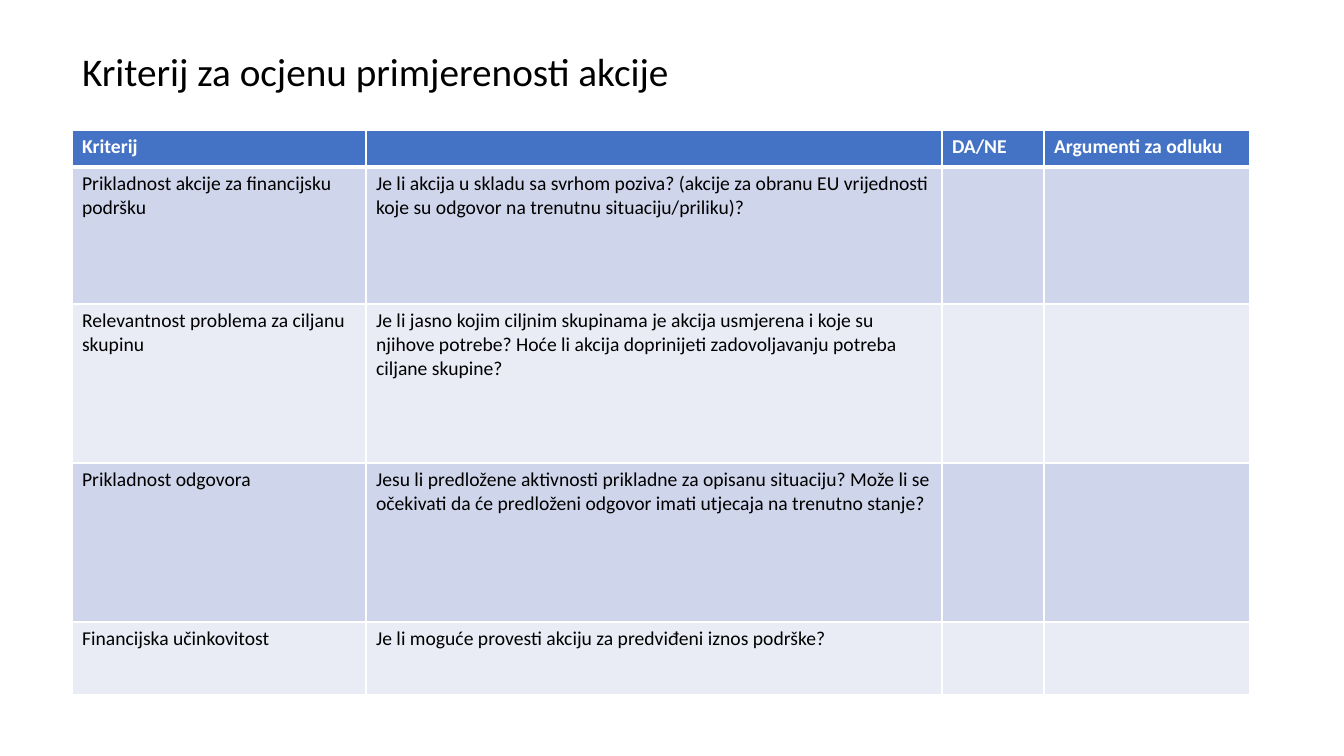
from lxml.etree import SubElement
from pptx import Presentation
from pptx.dml.color import RGBColor
from pptx.enum.text import MSO_ANCHOR as Anchor, PP_ALIGN as Align
from pptx.oxml.ns import qn
from pptx.util import Pt

# Content
TITLE = "Kriterij za ocjenu primjerenosti akcije"
ROWS = [
    ("Kriterij", "", "DA/NE", "Argumenti za odluku"),
    ("Prikladnost akcije za financijsku podršku",
     "Je li akcija u skladu sa svrhom poziva? (akcije za obranu EU vrijednosti "
     "koje su odgovor na trenutnu situaciju/priliku)?", "", ""),
    ("Relevantnost problema za ciljanu skupinu",
     "Je li jasno kojim ciljnim skupinama je akcija usmjerena i koje su njihove "
     "potrebe? Hoće li akcija doprinijeti zadovoljavanju potreba ciljane skupine?", "", ""),
    ("Prikladnost odgovora",
     "Jesu li predložene aktivnosti prikladne za opisanu situaciju? Može li se "
     "očekivati da će predloženi odgovor imati utjecaja na trenutno stanje?", "", ""),
    ("Financijska učinkovitost",
     "Je li moguće provesti akciju za predviđeni iznos podrške?", "", ""),
]

# Layout in px and style
SLIDE_SIZE = (1344, 756)
TITLE_BOX = (72, 42, 623, 57)
TABLE_LEFT, TABLE_TOP = 72, 130
COLUMN_WIDTHS = (294, 576, 102, 206)
ROW_HEIGHTS = (37, 137, 159, 159, 73)
FONT, TITLE_SIZE, CELL_SIZE = "Calibri", 28, 14
WHITE, BLACK = "FFFFFF", "000000"
HEADER_FILL, BAND_FILLS = "4472C4", ("CFD5EA", "E9EBF5")
THIN, THICK = 1, 3


def px(length):
    return round(length * 914400 / 100.8)


def color(value):
    return RGBColor.from_string(value)


def format_runs(paragraph, size, font_color, bold=False):
    for run in paragraph.runs:
        run.font.name, run.font.size, run.font.bold = FONT, Pt(size), bold
        run.font.color.rgb = color(font_color)


def add_borders(cell, top, bottom):
    properties = cell._tc.get_or_add_tcPr()
    for side, width in (("L", THIN), ("R", THIN), ("T", top), ("B", bottom)):
        line = SubElement(properties, qn(f"a:ln{side}"), w=str(Pt(width)))
        fill = SubElement(line, qn("a:solidFill"))
        SubElement(fill, qn("a:srgbClr"), val=WHITE)


def format_cell(cell, text, row_index):
    is_header = row_index == 0
    add_borders(cell, THICK if row_index == 1 else THIN, THICK if is_header else THIN)
    cell.fill.solid()
    cell.fill.fore_color.rgb = color(HEADER_FILL if is_header else BAND_FILLS[(row_index - 1) % 2])
    paragraph = cell.text_frame.paragraphs[0]
    paragraph.text = text
    format_runs(paragraph, CELL_SIZE, WHITE if is_header else BLACK, is_header)
    if not text:  # keeps an empty cell from stretching its row
        SubElement(paragraph._p, qn("a:endParaRPr"), sz=str(CELL_SIZE * 100))


def add_criteria_table(slide):
    table = slide.shapes.add_table(
        len(ROWS), len(COLUMN_WIDTHS), px(TABLE_LEFT), px(TABLE_TOP),
        px(sum(COLUMN_WIDTHS)), px(sum(ROW_HEIGHTS))).table
    for column, width in zip(table.columns, COLUMN_WIDTHS):
        column.width = px(width)
    for row_index, (row, height, texts) in enumerate(zip(table.rows, ROW_HEIGHTS, ROWS)):
        row.height = px(height)
        for cell, text in zip(row.cells, texts):
            format_cell(cell, text, row_index)


def add_title(slide):
    title = slide.shapes.title
    title.left, title.top, title.width, title.height = map(px, TITLE_BOX)
    frame = title.text_frame
    frame.text = TITLE
    frame.word_wrap = False
    frame.vertical_anchor = Anchor.TOP
    frame.paragraphs[0].alignment = Align.LEFT
    format_runs(frame.paragraphs[0], TITLE_SIZE, BLACK)


def main():
    presentation = Presentation()
    presentation.slide_width, presentation.slide_height = map(px, SLIDE_SIZE)
    slide = presentation.slides.add_slide(presentation.slide_layouts[5])
    add_criteria_table(slide)
    add_title(slide)
    presentation.save("out.pptx")


if __name__ == "__main__":
    main()
